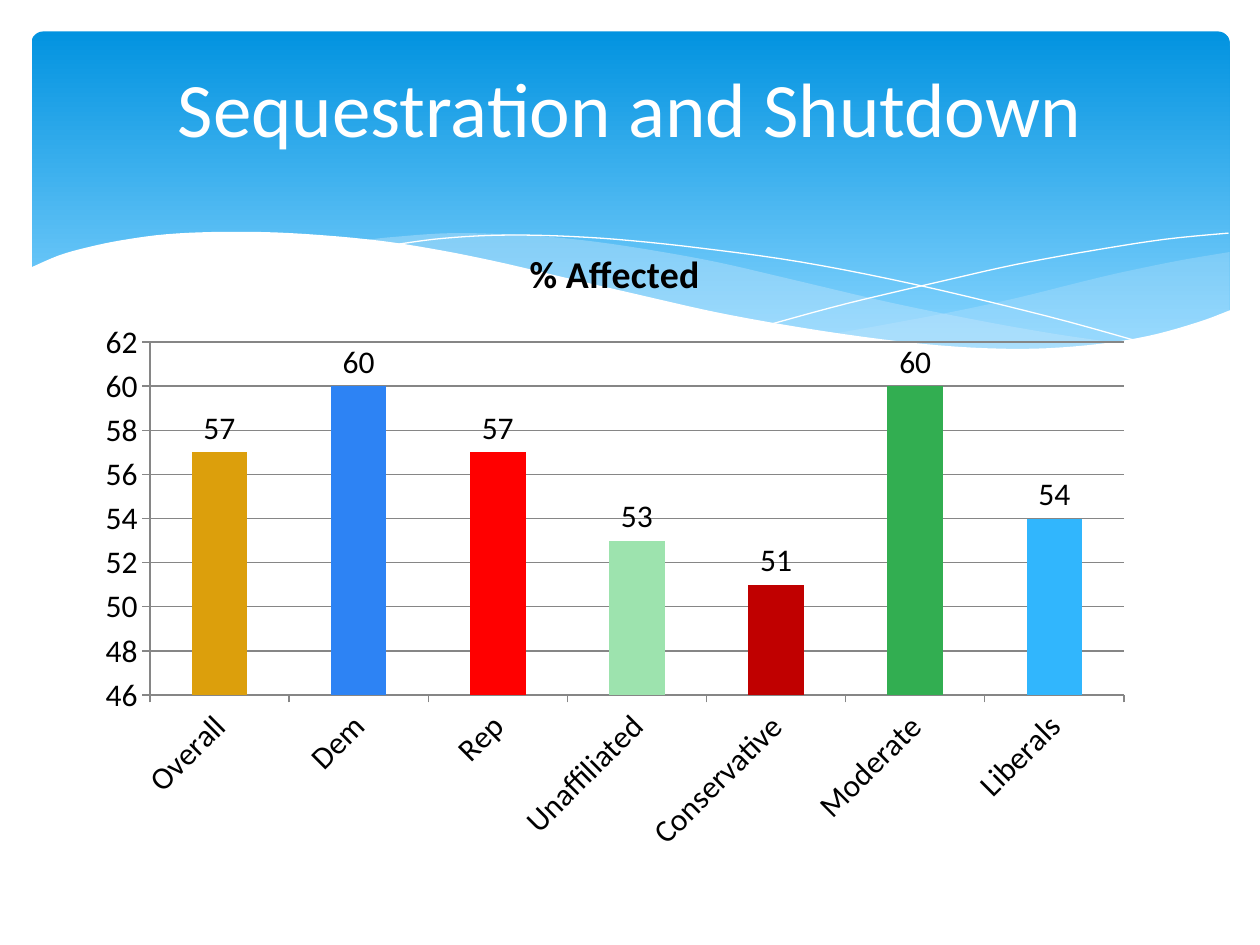
from dataclasses import dataclass
from typing import Optional

from lxml.etree import SubElement
from pptx import Presentation
from pptx.chart.data import CategoryChartData
from pptx.dml.color import RGBColor
from pptx.enum.chart import XL_CHART_TYPE, XL_LABEL_POSITION, XL_TICK_MARK
from pptx.enum.shapes import MSO_SHAPE
from pptx.enum.text import MSO_ANCHOR, PP_ALIGN
from pptx.oxml.ns import qn
from pptx.util import Pt

Point = tuple[float, float]
Curve = tuple[Point, ...]


@dataclass(frozen=True)
class Theme:
    font: str = "Calibri"
    white: str = "FFFFFF"
    black: str = "000000"
    grid: str = "868686"
    mist: str = "C6E7FC"
    top: str = "0293E0"
    base: str = "83D3FE"
    series: str = "31B6FD"
    head: float = 44
    label: float = 18
    title: float = 21.6


@dataclass(frozen=True)
class Wave:
    curves: tuple[Curve, ...]  # knots of each smooth stretch
    fill: Optional[str] = None  # None means an open hairline
    alpha: int = 100


@dataclass(frozen=True)
class Bar:
    name: str
    value: int
    color: str


THEME = Theme()

WAVES = (
    # Right mist
    Wave((((702.7, 144), (673.2, 149), (641.5, 155.5), (619.9, 160.6),
           (579.6, 170.6), (542.2, 178.6), (508.3, 185), (475.9, 190.8)),
          ((475.9, 190.8), (507.6, 195.1), (536.4, 198), (578.2, 200.2),
           (614.9, 198.7), (645.8, 194.4), (673.2, 188.6), (702.7, 177.8))),
         THEME.mist, 29),
    # Long mist
    Wave((((643, 196.6), (602.6, 190.8), (558, 182.9), (508.3, 172.8),
           (452.9, 159.8), (409.7, 149.8), (370.1, 142.6), (334.8, 137.5),
           (302.4, 134.6), (259.9, 133.2), (225.4, 135.4), (205.9, 137.5)),
          ((205.9, 137.5), (246.2, 143.3), (290.9, 151.9), (323.3, 159.8),
           (381.6, 172.8), (432.7, 183.6), (478.8, 191.5), (519.8, 197.3),
           (565.2, 200.2), (603.4, 200.2), (643, 196.6))),
         THEME.mist, 40),
    # Hairlines
    Wave((((222.5, 140.4), (247.7, 136.8), (278.6, 134.6), (311.8, 134.6),
           (352.1, 136.8), (400.3, 141.8), (457.9, 149.8), (523.4, 162.7),
           (598.3, 180.7), (653, 195.8)),)),
    Wave((((441.4, 185), (483.8, 173.5), (538.6, 160.6), (580.3, 151.2),
           (623.5, 143.3), (665.3, 136.8), (702, 133.2)),)),
    # White sweep below the banner
    Wave((((703.4, 177.1), (684, 184.3), (655.2, 192.2), (621.4, 197.3),
           (582.5, 199.4), (535.7, 197.3), (481, 190.8), (416.9, 180),
           (362.2, 167.8), (321.8, 158.4), (281.5, 149), (244.8, 141.8),
           (210.2, 136.8), (165.6, 133.2), (127.4, 132.5), (95, 133.9),
           (68.4, 137.5), (48.2, 141.8), (33.1, 146.2), (16.6, 153.4)),
          ((16.6, 236.9), (703.4, 236.9))),
         THEME.white),
)

BARS = (
    Bar("Overall", 57, "DC9F0C"),
    Bar("Dem", 60, "2D83F4"),
    Bar("Rep", 57, "FF0000"),
    Bar("Unaffiliated", 53, "9DE3AE"),
    Bar("Conservative", 51, "C00000"),
    Bar("Moderate", 60, "32AE51"),
    Bar("Liberals", 54, THEME.series),
)


def rgb(code: str) -> RGBColor:
    return RGBColor.from_string(code)


def style(font, size: float, color: str, bold: bool = False) -> None:
    font.name, font.size, font.bold = THEME.font, Pt(size), bold
    font.color.rgb = rgb(color)


def smooth(knots: Curve, steps: int = 5) -> list[Point]:
    """Sample a Catmull-Rom curve through the knots."""
    ends = (knots[0], *knots, knots[-1])
    points = [knots[0]]
    for a, b, c, d in zip(ends, ends[1:], ends[2:], ends[3:]):
        for step in range(1, steps + 1):
            t = step / steps
            x, y = (
                q + t / 2 * (r - p + t * (2 * p - 5 * q + 4 * r - s
                                          + t * (3 * (q - r) + s - p)))
                for p, q, r, s in zip(a, b, c, d)
            )
            points.append((x, y))
    return points


def draw_wave(shapes, wave: Wave) -> None:
    points = [(Pt(x), Pt(y)) for knots in wave.curves for x, y in smooth(knots)]
    pen = shapes.build_freeform(*points[0])
    pen.add_line_segments(points[1:], close=wave.fill is not None)
    shape = pen.convert_to_shape()
    shape.shadow.inherit = False
    if wave.fill is None:
        shape.fill.background()
        shape.line.color.rgb = rgb(THEME.white)
        shape.line.width = Pt(0)
        return
    shape.fill.solid()
    shape.fill.fore_color.rgb = rgb(wave.fill)
    shape.line.fill.background()
    if wave.alpha < 100:
        color = shape.fill._xPr.find(f".//{qn('a:srgbClr')}")
        SubElement(color, qn("a:alpha"), val=str(wave.alpha * 1000))


def draw_banner(shapes) -> None:
    shape = shapes.add_shape(MSO_SHAPE.ROUNDED_RECTANGLE,
                             Pt(18), Pt(18), Pt(684.7), Pt(194.4))
    shape.adjustments[0] = 0.034
    shape.shadow.inherit = False
    shape.line.fill.background()
    shape.fill.gradient()
    shape.fill.gradient_angle = 270
    stops = zip(shape.fill.gradient_stops, ((0, THEME.top), (0.9, THEME.base)))
    for stop, (place, color) in stops:
        stop.position, stop.color.rgb = place, rgb(color)


def draw_title(shapes, text: str) -> None:
    title = shapes.title
    title.left, title.top, title.width, title.height = Pt(36), Pt(26.6), Pt(648), Pt(69)
    frame = title.text_frame
    frame.text = text
    frame.vertical_anchor = MSO_ANCHOR.MIDDLE
    para = frame.paragraphs[0]
    para.alignment = PP_ALIGN.CENTER
    style(para.font, THEME.head, THEME.white)
    title.element.getparent().append(title.element)  # bring to front


def draw_chart(shapes, bars: tuple[Bar, ...]) -> None:
    data = CategoryChartData()
    data.categories = [bar.name for bar in bars]
    data.add_series("Series 1", [bar.value for bar in bars])
    chart = shapes.add_chart(XL_CHART_TYPE.COLUMN_CLUSTERED, Pt(48.2), Pt(126),
                             Pt(606.2), Pt(368), data).chart
    style(chart.font, THEME.label, THEME.black)
    chart.has_legend = False
    chart.has_title = True
    chart.chart_title.text_frame.text = "% Affected"
    para = chart.chart_title.text_frame.paragraphs[0]
    style(para.font, THEME.title, THEME.black, bold=True)

    # Axes
    cat, val = chart.category_axis, chart.value_axis
    for axis in (cat, val):
        axis.major_tick_mark = XL_TICK_MARK.OUTSIDE
        axis.format.line.color.rgb = rgb(THEME.grid)
        style(axis.tick_labels.font, THEME.label, THEME.black)
    cat.has_major_gridlines = False
    val.minimum_scale, val.maximum_scale, val.major_unit = 46, 62, 2
    val.major_gridlines.format.line.color.rgb = rgb(THEME.grid)
    for body in chart.element.xpath(".//c:catAx/c:txPr/a:bodyPr"):
        body.set("rot", "-2700000")

    # Columns and their values
    plot = chart.plots[0]
    plot.gap_width, plot.vary_by_categories = 150, False
    series = plot.series[0]
    series.format.fill.solid()
    series.format.fill.fore_color.rgb = rgb(THEME.series)
    for index, bar in enumerate(bars):
        fill = series.points[index].format.fill
        fill.solid()
        fill.fore_color.rgb = rgb(bar.color)
    labels = series.data_labels
    labels.show_value = True
    labels.position = XL_LABEL_POSITION.OUTSIDE_END
    style(labels.font, THEME.label, THEME.black)


def main() -> None:
    deck = Presentation()
    deck.slide_width, deck.slide_height = Pt(720), Pt(540)
    shapes = deck.slides.add_slide(deck.slide_layouts[5]).shapes
    draw_banner(shapes)
    for wave in WAVES:
        draw_wave(shapes, wave)
    draw_title(shapes, "Sequestration and Shutdown")
    draw_chart(shapes, BARS)
    deck.save("out.pptx")


if __name__ == "__main__":
    main()
